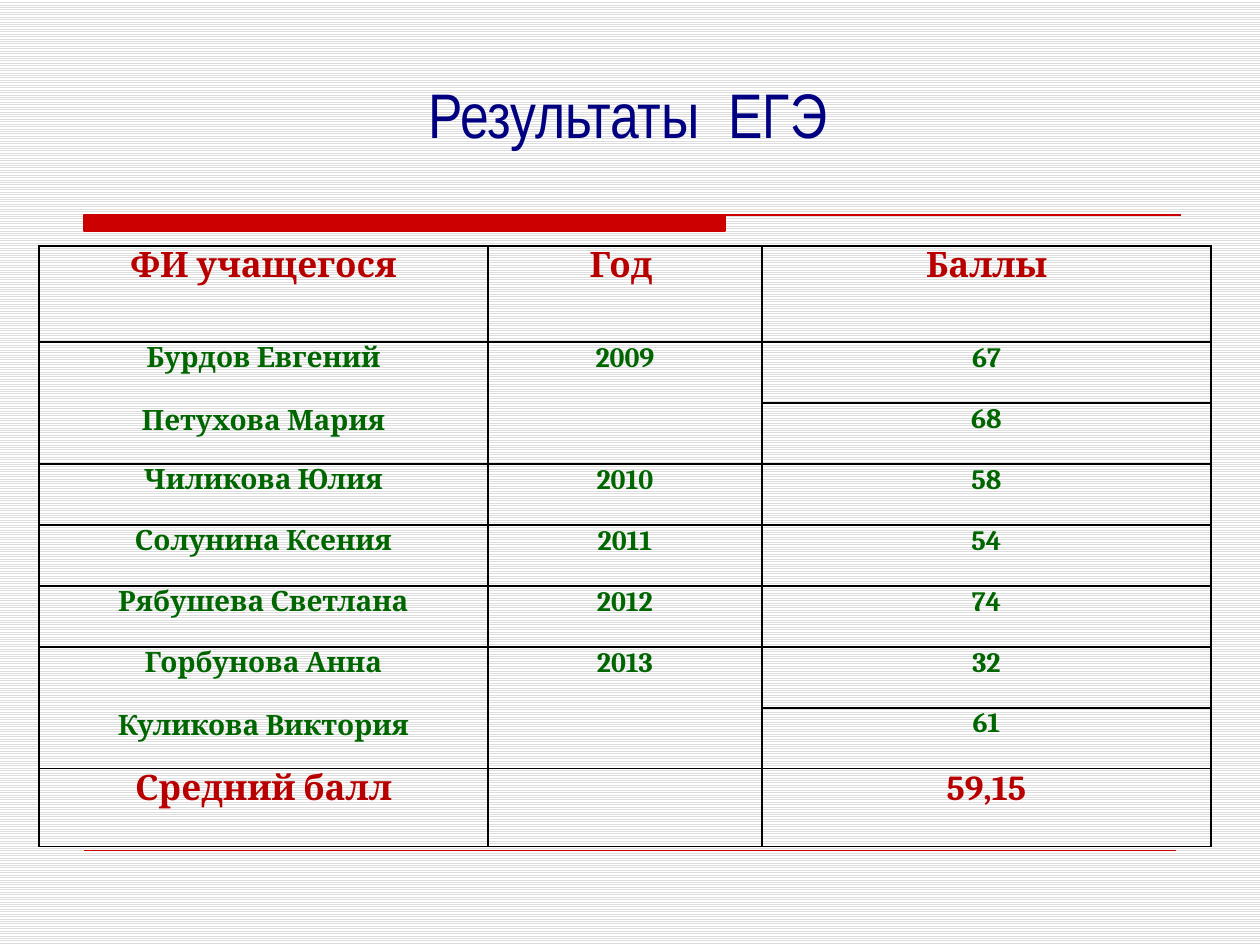
from lxml.etree import SubElement
from pptx import Presentation
from pptx.dml.color import RGBColor
from pptx.enum.dml import MSO_PATTERN
from pptx.enum.shapes import MSO_CONNECTOR
from pptx.enum.text import PP_ALIGN
from pptx.oxml import parse_xml
from pptx.oxml.ns import nsdecls, qn
from pptx.util import Pt

# Content
TITLE = "Результаты  ЕГЭ"
HEADER = ("ФИ учащегося", "Год ", "Баллы")
YEARS = [
    ("2009", [("Бурдов Евгений", "67"), ("Петухова Мария", "68")]),
    ("2010", [("Чиликова Юлия", "58")]),
    ("2011", [("Солунина Ксения", "54")]),
    ("2012", [("Рябушева Светлана", "74")]),
    ("2013", [("Горбунова Анна", "32"), ("Куликова Виктория", "61")]),
]
AVERAGE = ("Средний балл", "", "59,15")

# Look
RED, DARK_RED, GREEN, NAVY, BLACK = "CC0000", "B90000", "006600", "000080", "000000"
HEADING, BODY = (20, DARK_RED), (16, GREEN)
COLUMNS = (449, 274, 449)
HEADER_HEIGHT, ROW_HEIGHT, AVERAGE_HEIGHT = 96, 61, 78
SCALE = 914400 / 126


def px(length):
    return round(length * SCALE)


def color(value):
    return RGBColor.from_string(value)


def style(paragraph, font_name, size, font_color, bold):
    paragraph.alignment = PP_ALIGN.CENTER
    font = paragraph.font
    font.name, font.size, font.bold = font_name, Pt(size), bold
    font.color.rgb = color(font_color)


def write(cell, lines, look):
    cell.text = "\n".join(lines)
    for index, paragraph in enumerate(cell.text_frame.paragraphs):
        style(paragraph, "Cambria", *look, True)
        if index:
            paragraph.space_before = Pt(18)


def finish_cell(cell):
    cell.margin_left = cell.margin_right = px(9)
    cell.margin_top = cell.margin_bottom = 0
    cell.fill.background()
    properties = cell._tc.get_or_add_tcPr()
    for index, side in enumerate("LRTB"):
        properties.insert(index, parse_xml(
            f'<a:ln{side} {nsdecls("a")} w="12700"><a:solidFill>'
            f'<a:srgbClr val="{BLACK}"/></a:solidFill></a:ln{side}>'))


presentation = Presentation()
presentation.slide_width, presentation.slide_height = px(1260), px(945)
slide = presentation.slides.add_slide(presentation.slide_layouts[6])
shapes = slide.shapes

# Striped background
background = slide.background.fill
background.patterned()
background.pattern = MSO_PATTERN.LIGHT_HORIZONTAL
background.fore_color.rgb = color("DDDDDD")
background.back_color.rgb = color("FFFFFF")

# Bar with a long rule along its top
builder = shapes.build_freeform(84, 215, SCALE)
builder.add_line_segments([(725, 215), (725, 231), (84, 231)], close=True)
builder.move_to(84, 215)
builder.add_line_segments([(1181, 215)], close=False)
bar = builder.convert_to_shape()
bar.shadow.inherit = False
bar.fill.solid()
bar.fill.fore_color.rgb = color(RED)
bar.line.color.rgb = color(RED)
bar.line.width = Pt(0.75)

# Bottom rule
rule = shapes.add_connector(MSO_CONNECTOR.STRAIGHT, px(84), px(850), px(1176), px(850))
rule.line.color.rgb = color(RED)
rule.line.width = Pt(0.25)
SubElement(rule._element.spPr, qn("a:effectLst"))

# Results table
students = sum(len(results) for _, results in YEARS)
heights = [HEADER_HEIGHT] + [ROW_HEIGHT] * students + [AVERAGE_HEIGHT]
table = shapes.add_table(len(heights), len(COLUMNS), px(39), px(246),
                         px(sum(COLUMNS)), px(sum(heights))).table
table.first_row = table.horz_banding = False
for column, width in zip(table.columns, COLUMNS):
    column.width = px(width)
for row, height in zip(table.rows, heights):
    row.height = px(height)

for row, texts in ((0, HEADER), (len(heights) - 1, AVERAGE)):
    for column, text in enumerate(texts):
        write(table.cell(row, column), [text], HEADING)

row = 1
for year, results in YEARS:
    last = row + len(results) - 1
    if last > row:
        for column in (0, 1):
            table.cell(row, column).merge(table.cell(last, column))
    write(table.cell(row, 0), [name for name, _ in results], BODY)
    write(table.cell(row, 1), [year], BODY)
    for offset, (_, score) in enumerate(results):
        write(table.cell(row + offset, 2), [score], BODY)
    row = last + 1

for cell in table.iter_cells():
    finish_cell(cell)

# Title
title = shapes.add_textbox(px(266), px(69), px(724), px(73)).text_frame
title.word_wrap = False
title.text = TITLE
style(title.paragraphs[0], "Arial Narrow", 36, NAVY, False)

presentation.save("out.pptx")
